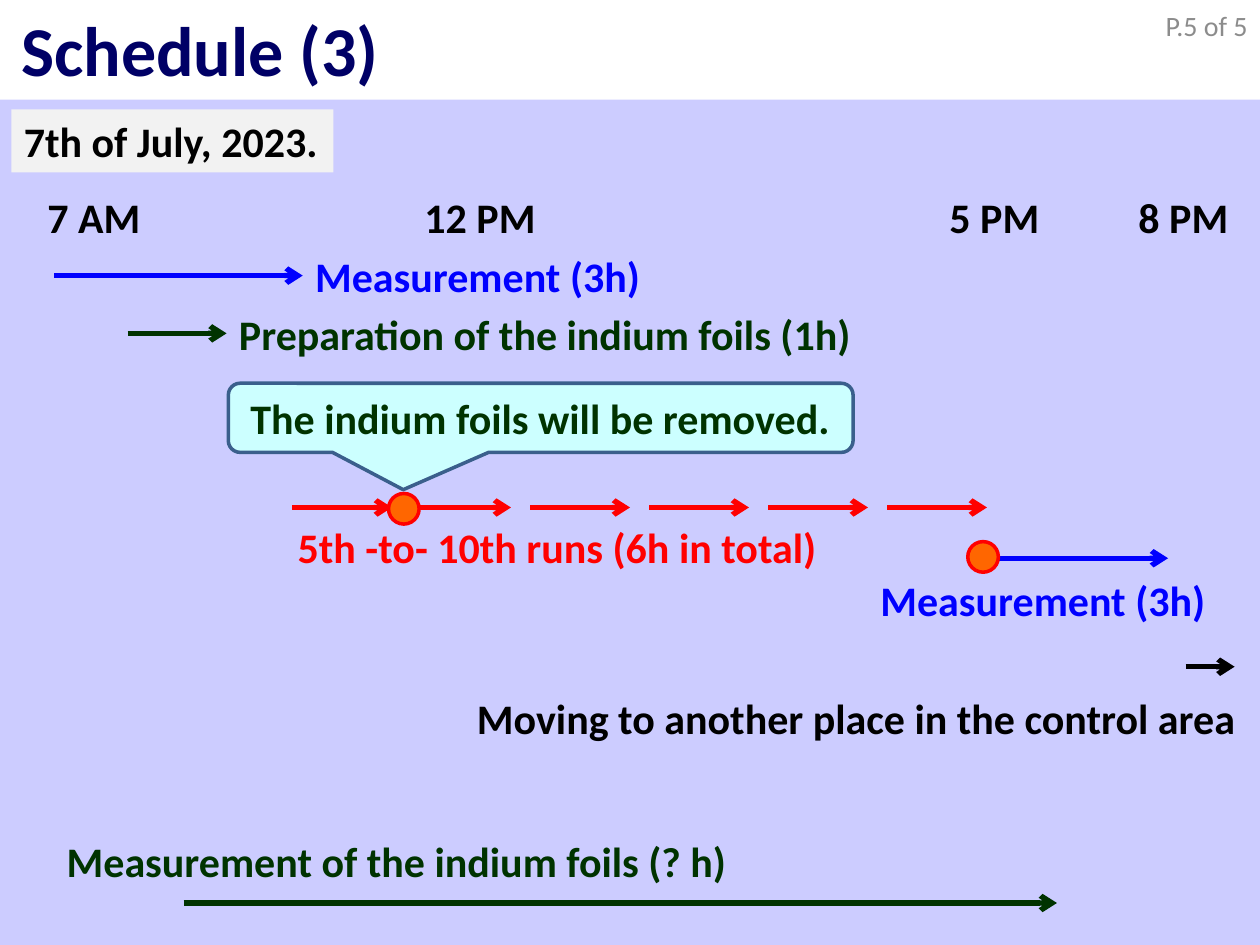
from dataclasses import dataclass
from typing import Optional

from lxml import etree
from pptx import Presentation
from pptx.dml.color import RGBColor
from pptx.enum import shapes as s, text as t
from pptx.oxml.ns import qn
from pptx.util import Pt

FONT = "Calibri"
BLACK, WHITE, BLUE, RED, GREEN = "000000", "FFFFFF", "0000FF", "FF0000", "003300"
LABEL_HEIGHT = 36


@dataclass
class Label:
    text: str
    left: float
    top: float
    width: float
    color: str = BLACK
    arrow_from: Optional[float] = None  # start of an arrow leading to the label


@dataclass
class Arrow:
    start: float
    end: float
    y: float
    color: str


def rgb(value: str) -> RGBColor:
    return RGBColor.from_string(value)


def write(shape, text: str, *, size=24, color=BLACK, bold=True, wrap=False,
          align=t.PP_ALIGN.LEFT, anchor=t.MSO_ANCHOR.TOP) -> None:
    frame = shape.text_frame
    frame.word_wrap = wrap
    frame.auto_size = t.MSO_AUTO_SIZE.NONE if wrap else t.MSO_AUTO_SIZE.SHAPE_TO_FIT_TEXT
    frame.vertical_anchor = anchor
    paragraph = frame.paragraphs[0]
    paragraph.alignment = align
    run = paragraph.add_run()
    run.text = text
    font = run.font
    font.name, font.size, font.bold = FONT, Pt(size), bold
    font.color.rgb = rgb(color)


def add_block(slide, kind, left, top, width, height, fill: str, line: Optional[str] = None):
    block = slide.shapes.add_shape(kind, Pt(left), Pt(top), Pt(width), Pt(height))
    block.shadow.inherit = False
    block.fill.solid()
    block.fill.fore_color.rgb = rgb(fill)
    if line:
        block.line.color.rgb = rgb(line)
        block.line.width = Pt(2)
    else:
        block.line.fill.background()
    return block


def add_arrow(slide, arrow: Arrow):
    line = slide.shapes.add_connector(
        s.MSO_CONNECTOR.STRAIGHT, Pt(arrow.start), Pt(arrow.y), Pt(arrow.end), Pt(arrow.y))
    line.line.color.rgb = rgb(arrow.color)
    line.line.width = Pt(3)
    etree.SubElement(line.line._get_or_add_ln(), qn("a:tailEnd"), type="arrow")
    etree.SubElement(line._element.spPr, qn("a:effectLst"))
    return line


def add_label(slide, label: Label) -> None:
    box = slide.shapes.add_textbox(
        Pt(label.left), Pt(label.top), Pt(label.width), Pt(LABEL_HEIGHT))
    write(box, label.text, color=label.color)
    if label.arrow_from is not None:
        middle = label.top + LABEL_HEIGHT / 2
        arrow = add_arrow(slide, Arrow(label.arrow_from, label.left, middle, label.color))
        arrow.end_connect(box, 1)


def add_milestone(slide, left: float, top: float) -> None:
    add_block(slide, s.MSO_SHAPE.OVAL, left, top, 17.5, 17.5, "FF6600", RED)


HOURS = [
    Label("7 AM", 20, 106, 68.5),
    Label("12 PM", 235.5, 106, 80.5),
    Label("5 PM", 535.5, 106, 66.5),
    Label("8 PM", 643.5, 106, 66.5),
]
TASKS = [
    Label("Measurement (3h)", 173, 139.5, 202, BLUE, arrow_from=31),
    Label("Preparation of the indium foils (1h)", 129.5, 172.5, 368, GREEN, arrow_from=73),
    Label("5th -to- 10th runs (6h in total)", 163, 294.5, 314, RED),
    Label("Measurement (3h)", 496, 324.5, 202, BLUE),
    Label("Moving to another place in the control area", 265.5, 392, 454.5),
    Label("Measurement of the indium foils (? h)", 31, 474, 395, GREEN),
]
RUN_COUNT, RUN_START, RUN_PITCH, RUN_LENGTH, RUN_Y = 6, 167, 68, 57, 290
RUNS = [Arrow(RUN_START + i * RUN_PITCH, RUN_START + i * RUN_PITCH + RUN_LENGTH, RUN_Y, RED)
        for i in range(RUN_COUNT)]
SPANS = [
    Arrow(565, 667.5, 319, BLUE),
    Arrow(677.5, 705.5, 381, BLACK),
    Arrow(105, 604, 516, GREEN),
]


def main() -> None:
    prs = Presentation()
    prs.slide_width, prs.slide_height = Pt(720), Pt(540)
    slide = prs.slides.add_slide(prs.slide_layouts[5])
    slide.background.fill.solid()
    slide.background.fill.fore_color.rgb = rgb("CCCCFF")

    # Header band, with the title brought in front of it
    add_block(slide, s.MSO_SHAPE.RECTANGLE, 0, 0, 720, 57, WHITE)
    title = slide.shapes.title
    slide.shapes._spTree.append(title._element)
    title.left, title.top, title.width, title.height = Pt(5), Pt(0), Pt(221), Pt(55.5)
    write(title, "Schedule (3)", size=40, color="000066", anchor=t.MSO_ANCHOR.MIDDLE)
    page = slide.shapes.add_textbox(Pt(552), Pt(0), Pt(168), Pt(29))
    write(page, "P.5 of 5", size=16, color="8C8C8C", bold=False, wrap=True,
          align=t.PP_ALIGN.RIGHT, anchor=t.MSO_ANCHOR.MIDDLE)

    # Date and hours
    date = add_block(slide, s.MSO_SHAPE.RECTANGLE, 6.5, 62.5, 184, LABEL_HEIGHT, "F2F2F2")
    write(date, "7th of July, 2023.")

    # Tasks and their time spans
    for label in HOURS + TASKS:
        add_label(slide, label)
    for arrow in RUNS + SPANS:
        add_arrow(slide, arrow)

    # Callout on the removal of the foils
    callout = add_block(slide, s.MSO_SHAPE.ROUNDED_RECTANGULAR_CALLOUT,
                        130.5, 219, 357, 39.5, "CCFFFF", "3A5F8C")
    for i, value in enumerate((-0.22, 1.04, 0.17)):
        callout.adjustments[i] = value
    add_label(slide, Label("The indium foils will be removed.", 136, 220.5, 348.5, GREEN))

    # Milestones: foil removal and end of the runs
    add_milestone(slide, 222, 282)
    add_milestone(slide, 553, 309.5)

    prs.save("out.pptx")


if __name__ == "__main__":
    main()
